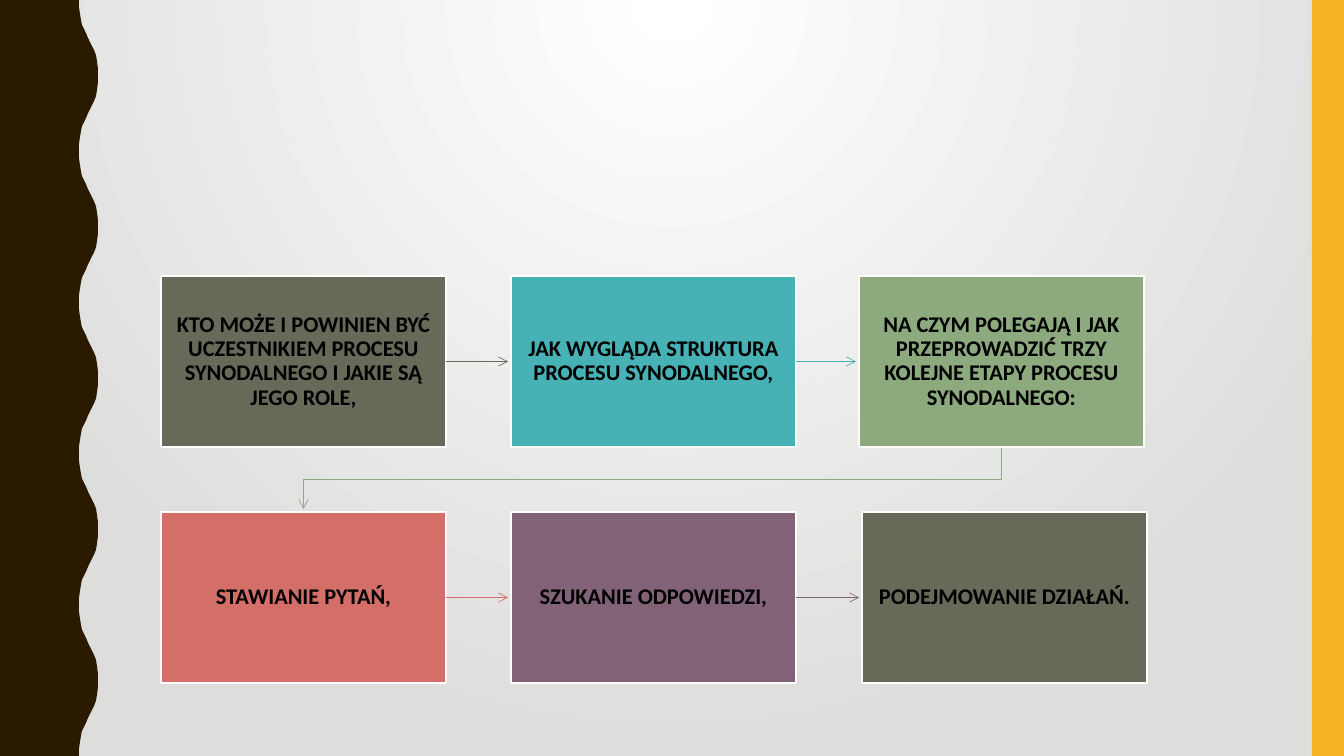
from lxml.etree import SubElement as Sub
from pptx import Presentation
from pptx.dml.color import RGBColor as Rgb
from pptx.enum.shapes import MSO_CONNECTOR as Link, MSO_SHAPE as Kind
from pptx.enum.text import MSO_ANCHOR as Anchor, PP_ALIGN as Align
from pptx.oxml.ns import qn
from pptx.util import Emu, Pt

SCALE = 914400 / 100.8
WIDE, HIGH = 1344, 756
BOX_W, BOX_H = 285, 171
GAP = 3  # space between an arrow tip and the next box

HUE = {
    "white": "FFFFFF", "mist": "DDDDDC", "brown": "2A1A00", "gold": "F8B323",
    "olive": "656A59", "teal": "46B2B5", "green": "8CAA7E",
    "coral": "D36F68", "plum": "826276", "black": "000000",
}

# Each row: top, then left, colour and text of its boxes
ROWS = [
    (276, [
        (161, "olive", "KTO MOŻE I POWINIEN BYĆ UCZESTNIKIEM PROCESU "
                       "SYNODALNEGO I JAKIE SĄ JEGO ROLE,"),
        (511, "teal", "JAK WYGLĄDA STRUKTURA PROCESU SYNODALNEGO,"),
        (859, "green", "NA CZYM POLEGAJĄ I JAK PRZEPROWADZIĆ TRZY KOLEJNE "
                       "ETAPY PROCESU SYNODALNEGO:"),
    ]),
    (512, [
        (161, "coral", "STAWIANIE PYTAŃ,"),
        (511, "plum", "SZUKANIE ODPOWIEDZI,"),
        (862, "olive", "PODEJMOWANIE DZIAŁAŃ."),
    ]),
]

# Half a wave of the left band, from trough to crest
CURVE = [
    (79, 0), (79, 7), (80, 14), (81, 20), (82, 25), (84, 29), (86, 33),
    (88, 38), (90, 42), (92, 46), (94, 50), (96, 55), (97, 61), (98, 69),
    (98, 76),
]
WAVES = 5


def px(num):
    return Emu(round(num * SCALE))


def tint(name):
    return Rgb.from_string(HUE[name])


def paint(shape, fill=None, line=None, size=1):
    shape.shadow.inherit = False
    if fill:
        shape.fill.solid()
        shape.fill.fore_color.rgb = tint(fill)
    else:
        shape.fill.background()
    if line:
        shape.line.color.rgb = tint(line)
        shape.line.width = Pt(size)
    else:
        shape.line.fill.background()


def add_rect(slide, left, top, wide, high, fill, line=None):
    rect = slide.shapes.add_shape(
        Kind.RECTANGLE, px(left), px(top), px(wide), px(high))
    paint(rect, fill, line)
    return rect


def add_poly(slide, dots, close):
    first, *rest = [(px(x), px(y)) for x, y in dots]
    form = slide.shapes.build_freeform(*first, scale=1.0)
    form.add_line_segments(rest, close=close)
    return form.convert_to_shape()


def add_box(slide, left, top, fill, text):
    box = add_rect(slide, left, top, BOX_W, BOX_H, fill, "white")
    frame = box.text_frame
    frame.word_wrap = True
    frame.vertical_anchor = Anchor.MIDDLE
    frame.margin_left = frame.margin_right = px(14)
    frame.margin_top = frame.margin_bottom = px(15)
    para = frame.paragraphs[0]
    para.alignment = Align.CENTER
    para.line_spacing = 0.9
    run = para.add_run()
    run.text = text
    font = run.font
    font.name, font.size, font.bold = "Calibri", Pt(16), True
    font.color.rgb = tint("black")
    return box


def add_head(shape):
    Sub(shape.line._get_or_add_ln(), qn("a:tailEnd"), type="arrow")


def add_arrow(slide, box, end, mid, name):
    line = slide.shapes.add_connector(
        Link.STRAIGHT, box.left + box.width, px(mid), px(end), px(mid))
    line.begin_connect(box, 3)
    # Keep the arrow level with its start
    line.end_y = line.begin_y
    line.line.color.rgb = tint(name)
    line.line.width = Pt(0.5)
    add_head(line)
    Sub(line._element.spPr, qn("a:effectLst"))


def add_glow(slide):
    fill = slide.background.fill
    fill.gradient()
    for stop, name in zip(fill.gradient_stops, ("white", "mist")):
        stop.color.rgb = tint(name)
    grad = next(slide._element.iter(qn("a:gradFill")))
    for lin in grad.findall(qn("a:lin")):
        grad.remove(lin)
    ring = Sub(grad, qn("a:path"), {"path": "circle"})
    Sub(ring, qn("a:fillToRect"), l="43000", t="0", r="43000", b="100000")


def add_band(slide):
    step = HIGH / WAVES
    wave = CURVE + [(x, step - y) for x, y in CURVE[-2::-1]]
    edge = [(x, y + i * step) for i in range(WAVES) for x, y in wave]
    paint(add_poly(slide, [(0, 0), *edge, (0, HIGH)], True), "brown")


def add_row(slide, top, cells):
    boxes = [add_box(slide, left, top, *rest) for left, *rest in cells]
    for box, cell, after in zip(boxes, cells, cells[1:]):
        add_arrow(slide, box, after[0] - GAP, top + BOX_H / 2, cell[1])


def add_turn(slide):
    # Bent arrow from the last box of row one to the first of row two
    (top, upper), (low, lower) = ROWS
    start, name, _ = upper[-1]
    from_x, to_x = start + BOX_W / 2, lower[0][0] + BOX_W / 2
    base = top + BOX_H
    mid = (base + low) / 2
    turn = add_poly(slide, [(from_x, base), (from_x, mid), (to_x, mid),
                            (to_x, low - GAP)], False)
    paint(turn, None, name, 0.5)
    add_head(turn)


def main():
    deck = Presentation()
    deck.slide_width, deck.slide_height = px(WIDE), px(HIGH)
    slide = deck.slides.add_slide(deck.slide_layouts[6])

    # Backdrop
    add_glow(slide)
    add_band(slide)
    add_rect(slide, 1312, 0, 32, HIGH, "gold")

    # Process steps
    add_turn(slide)
    for top, cells in ROWS:
        add_row(slide, top, cells)

    deck.save("out.pptx")


if __name__ == "__main__":
    main()
